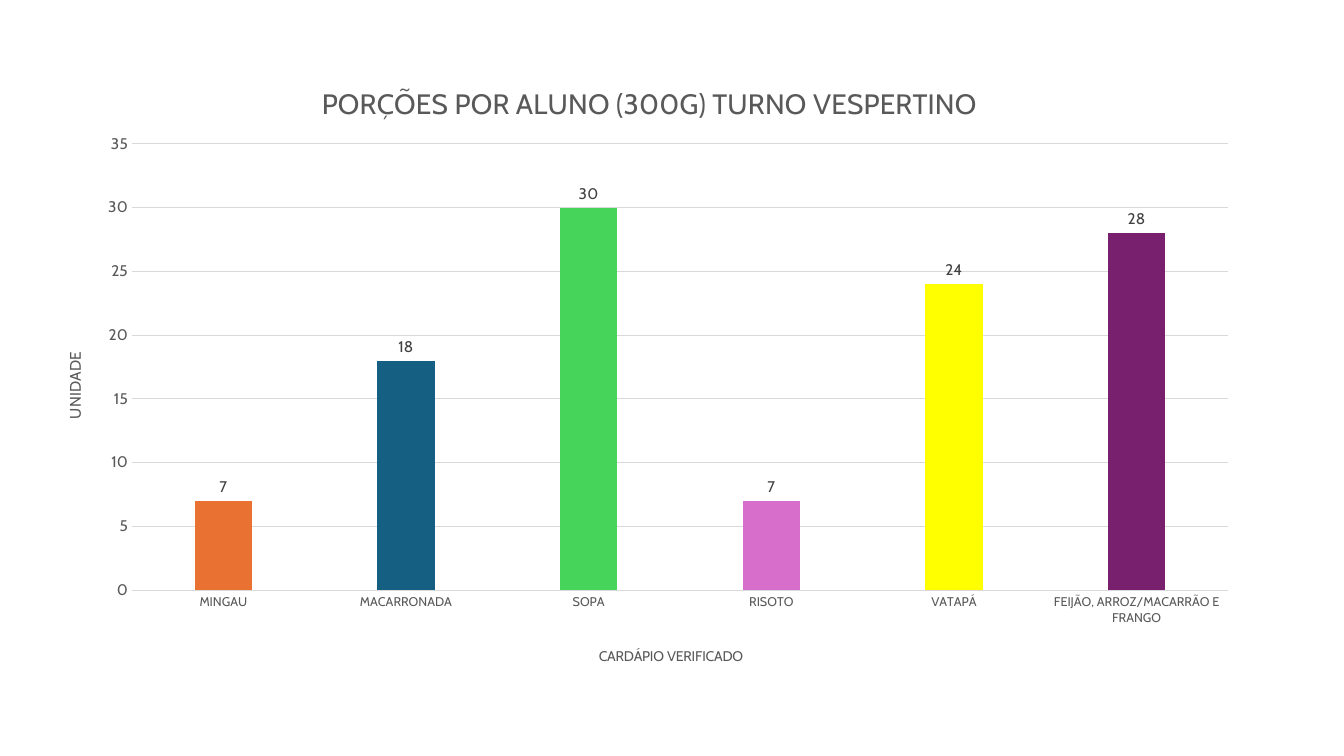
from lxml import etree
from pptx import Presentation
from pptx.chart.data import CategoryChartData
from pptx.dml.color import RGBColor
from pptx.enum.chart import XL_CHART_TYPE, XL_LABEL_POSITION, XL_TICK_MARK
from pptx.oxml.ns import qn
from pptx.util import Inches, Pt

COLUMNS = XL_CHART_TYPE.COLUMN_CLUSTERED
OUTSIDE_END = XL_LABEL_POSITION.OUTSIDE_END
NO_TICK = XL_TICK_MARK.NONE

PORTIONS = [
    ("MINGAU", 7, "E97132"),
    ("MACARRONADA", 18, "156082"),
    ("SOPA", 30, "47D45A"),
    ("RISOTO", 7, "D86ECC"),
    ("VATAPÁ", 24, "FFFF00"),
    ("FEIJÃO, ARROZ/MACARRÃO E FRANGO", 28, "78206E"),
]


def rgb(value):
    return RGBColor.from_string(value)


def place(parent, index, **fractions):
    """Set a manual layout, in fractions of the chart, as child number index."""
    for old in parent.findall(qn("c:layout")):
        parent.remove(old)
    layout = etree.Element(qn("c:layout"))
    manual = etree.SubElement(layout, qn("c:manualLayout"))
    if "w" in fractions:
        etree.SubElement(manual, qn("c:layoutTarget")).set("val", "inner")
    for mode in ("xMode", "yMode"):
        etree.SubElement(manual, qn(f"c:{mode}")).set("val", "edge")
    for name, value in fractions.items():
        etree.SubElement(manual, qn(f"c:{name}")).set("val", str(value))
    parent.insert(index, layout)


class ChartSlide:
    FONT = "Cabin"
    TEXT = "595959"
    LABEL = "404040"
    RULE = "D9D9D9"

    def __init__(self, prs):
        self.slide = prs.slides.add_slide(prs.slide_layouts[6])

    def style_font(self, font, size, color=TEXT):
        font.name = self.FONT
        font.size = Pt(size)
        font.bold = False
        font.color.rgb = rgb(color)

    def style_rule(self, line):
        line.color.rgb = rgb(self.RULE)
        line.width = Pt(0.75)

    def title(self, title, text, size, x, y):
        p = title.text_frame.paragraphs[0]
        p.text = text
        self.style_font(p.font, size)
        place(title.element, 1, x=x, y=y)

    def axis(self, axis, size):
        axis.major_tick_mark = axis.minor_tick_mark = NO_TICK
        self.style_font(axis.tick_labels.font, size)

    def column_chart(self, rows, left, top, width, height):
        data = CategoryChartData(number_format="0")
        data.categories = [name for name, _, _ in rows]
        data.add_series("Series 1", [value for _, value, _ in rows])
        chart = self.slide.shapes.add_chart(
            COLUMNS, Inches(left), Inches(top), Inches(width), Inches(height), data
        ).chart
        self.style_font(chart.font, 10, "000000")
        chart.has_legend = False

        plot = chart.plots[0]
        plot.gap_width = 219
        plot.overlap = -27
        plot.vary_by_categories = False
        series = plot.series[0]
        for i, (_, _, color) in enumerate(rows):
            fill = series.points[i].format.fill
            fill.solid()
            fill.fore_color.rgb = rgb(color)

        labels = series.data_labels
        labels.show_value = True
        labels.position = OUTSIDE_END
        labels.number_format = "0"
        labels.number_format_is_linked = False
        self.style_font(labels.font, 11, self.LABEL)
        return chart


def main():
    prs = Presentation()
    prs.slide_width = Inches(13.33)
    prs.slide_height = Inches(7.5)

    s = ChartSlide(prs)
    chart = s.column_chart(PORTIONS, 0.37, 0.53, 12.05, 6.23)
    plot_area = chart.element.find(".//" + qn("c:plotArea"))
    place(plot_area, 0, x=0.078, y=0.144, w=0.902, h=0.711)
    s.title(chart.chart_title, "PORÇÕES POR ALUNO (300G) TURNO VESPERTINO", 20, 0.23, 0.04)

    menu = chart.category_axis
    s.axis(menu, 9)
    s.style_rule(menu.format.line)
    s.title(menu.axis_title, "CARDÁPIO VERIFICADO", 10, 0.46, 0.94)

    units = chart.value_axis
    s.axis(units, 11)
    units.minimum_scale, units.maximum_scale, units.major_unit = 0, 35, 5
    units.tick_labels.number_format = "0"
    units.tick_labels.number_format_is_linked = False
    units.format.line.fill.background()
    s.style_rule(units.major_gridlines.format.line)
    s.title(units.axis_title, "UNIDADE", 11, 0.02, 0.47)

    prs.save("out.pptx")


if __name__ == "__main__":
    main()
